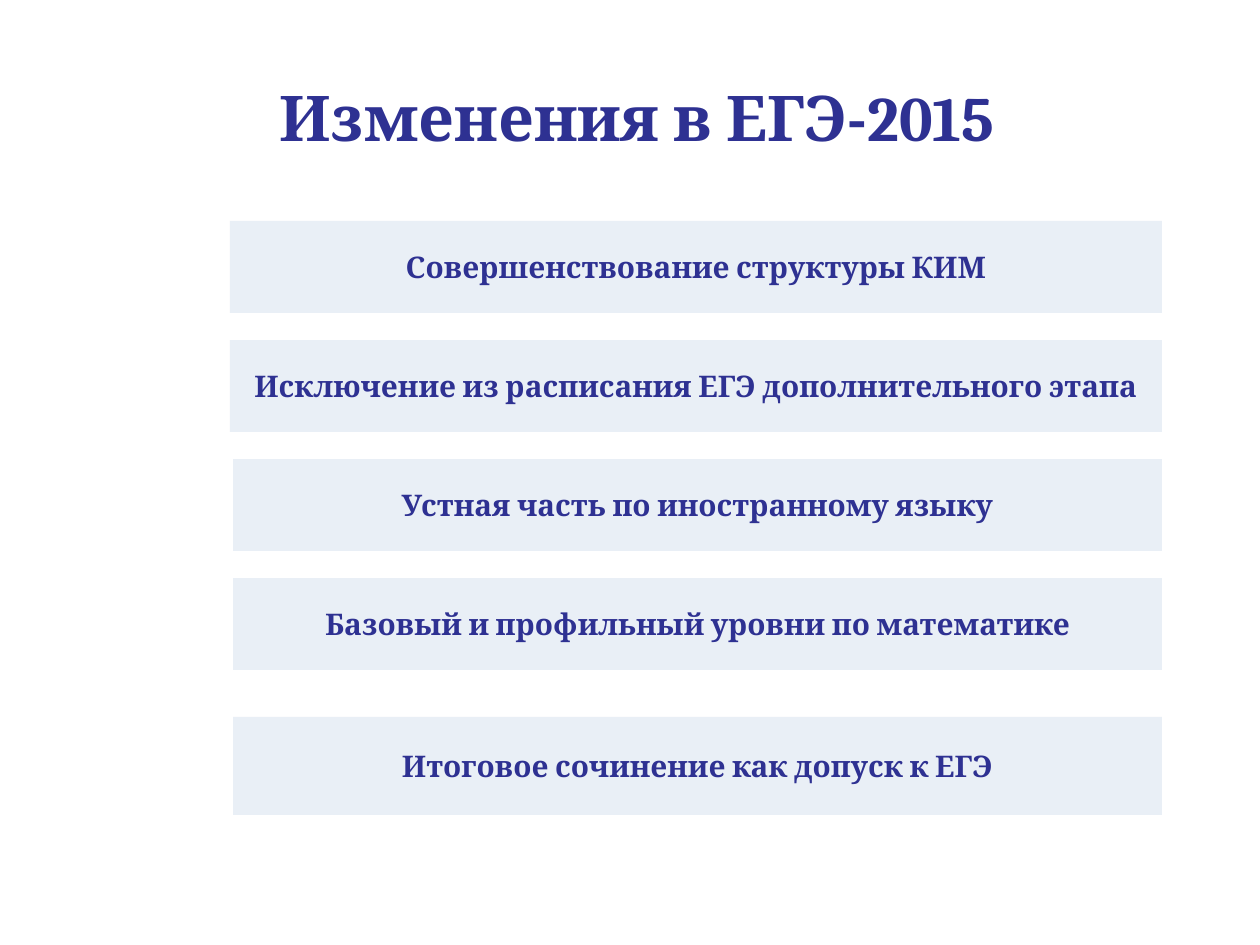
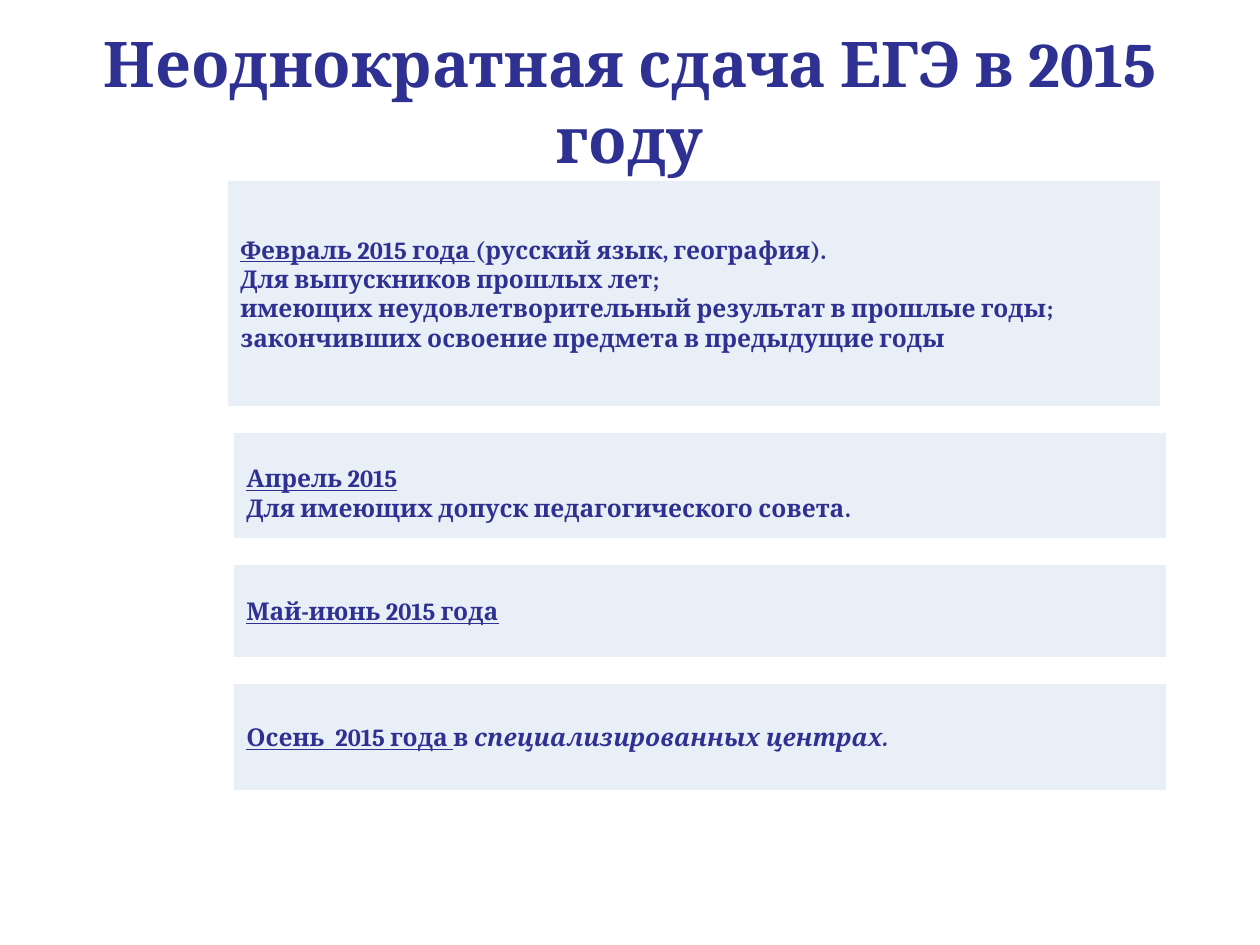
from dataclasses import dataclass

from lxml import etree
from pptx import Presentation
from pptx.dml.color import RGBColor
from pptx.enum.shapes import MSO_SHAPE
from pptx.enum.text import MSO_ANCHOR, PP_ALIGN
from pptx.oxml.ns import qn
from pptx.util import Emu, Pt

RECTANGLE = MSO_SHAPE.RECTANGLE
MIDDLE = MSO_ANCHOR.MIDDLE
CENTER, JUSTIFY = PP_ALIGN.CENTER, PP_ALIGN.JUSTIFY

EMU_PER_PX = 914400 / 126
FONT = "Cambria"
INK = "2E3192"
BAR_FILL = "B9CDE5"
BAR_OPACITY = 31
BAR_WIDTH, BAR_HEIGHT, BAR_GAP = 932, 92, 27
TITLE_SIZE = 36


@dataclass(frozen=True)
class Phrase:
    text: str
    underline: bool = False
    italic: bool = False


@dataclass(frozen=True)
class Line:
    phrases: tuple[Phrase, ...]
    spacing: float = 1.0


@dataclass(frozen=True)
class Bar:
    lines: tuple[Line, ...]
    left: int
    width: int = BAR_WIDTH
    height: int = BAR_HEIGHT
    gap_before: int = BAR_GAP


def px(length: int) -> Emu:
    return Emu(round(length * EMU_PER_PX))


def color(value: str) -> RGBColor:
    return RGBColor.from_string(value)


def line(*phrases: Phrase, spacing: float = 1.0) -> Line:
    return Line(phrases, spacing)


def add_text_shadow(run) -> None:
    """Give the letters a soft grey shadow towards the lower right."""
    effects = etree.Element(qn("a:effectLst"))
    shadow = etree.SubElement(effects, qn("a:outerShdw"), blurRad="38100",
                              dist="38100", dir="2700000", algn="tl")
    shade = etree.SubElement(shadow, qn("a:srgbClr"), val="000000")
    etree.SubElement(shade, qn("a:alpha"), val="43000")
    run.font.fill._xPr.find(qn("a:solidFill")).addnext(effects)


def write_text(shape, lines: tuple[Line, ...], *, size: int,
               align=CENTER, shadow: bool = False) -> None:
    frame = shape.text_frame
    frame.word_wrap = True
    frame.vertical_anchor = MIDDLE
    for index, text_line in enumerate(lines):
        paragraph = frame.add_paragraph() if index else frame.paragraphs[0]
        paragraph.alignment = align
        paragraph.line_spacing = text_line.spacing
        for phrase in text_line.phrases:
            run = paragraph.add_run()
            run.text = phrase.text
            run.font.name = FONT
            run.font.size = Pt(size)
            run.font.bold = True
            run.font.italic = phrase.italic
            run.font.underline = phrase.underline
            run.font.color.rgb = color(INK)
            if shadow:
                add_text_shadow(run)


def add_title(slide, text: str, left: int, top: int, width: int, height: int) -> None:
    box = slide.shapes.add_textbox(px(left), px(top), px(width), px(height))
    write_text(box, (line(Phrase(text)),), size=TITLE_SIZE, shadow=True)


def add_bar(slide, bar: Bar, top: int, size: int, align) -> None:
    shape = slide.shapes.add_shape(RECTANGLE, px(bar.left), px(top),
                                   px(bar.width), px(bar.height))
    shape.shadow.inherit = False
    shape.line.fill.background()
    shape.fill.solid()
    shape.fill.fore_color.rgb = color(BAR_FILL)
    fill_color = shape.fill._xPr.find(qn("a:solidFill"))[0]
    etree.SubElement(fill_color, qn("a:alpha"), val=str(BAR_OPACITY * 1000))
    write_text(shape, bar.lines, size=size, align=align)


def stack_bars(slide, bars: list[Bar], top: int, *, size: int, align) -> None:
    """Place the bars one below another, the first at top."""
    for index, bar in enumerate(bars):
        if index:
            top += bar.gap_before
        add_bar(slide, bar, top, size, align)
        top += bar.height


def build_changes(slide) -> None:
    def change(text: str, left: int = 230, **layout: int) -> Bar:
        return Bar((line(Phrase(text)),), left, width=1162 - left, **layout)

    add_title(slide, "Изменения в ЕГЭ-2015", 70, 72, 1134, 89)
    stack_bars(slide, [
        change("Совершенствование структуры КИМ"),
        change("Исключение из расписания ЕГЭ дополнительного этапа"),
        change("Устная часть по иностранному языку", 233),
        change("Базовый и профильный уровни по математике", 233),
        change("Итоговое сочинение как допуск к ЕГЭ", 233, height=98, gap_before=47),
    ], 221, size=17, align=CENTER)


def build_periods(slide) -> None:
    february = (
        line(Phrase("Февраль 2015 года ", underline=True),
             Phrase("(русский язык, география).")),
        line(Phrase("Для выпускников прошлых лет;")),
        line(Phrase("имеющих неудовлетворительный результат в прошлые годы;")),
        line(Phrase("закончивших освоение предмета в предыдущие годы")),
    )
    april = (
        line(Phrase("Апрель 2015", underline=True), spacing=1.5),
        line(Phrase("Для имеющих допуск педагогического совета.")),
    )
    summer = (line(Phrase("Май-июнь 2015 года", underline=True)),)
    autumn = (
        line(Phrase("Осень  2015 года ", underline=True), Phrase("в "),
             Phrase("специализированных центрах.", italic=True)),
    )
    add_title(slide, "Неоднократная сдача ЕГЭ в 2015 году", 44, 18, 1172, 165)
    stack_bars(slide, [
        Bar(february, 228, height=225),
        Bar(april, 234, height=105),
        Bar(summer, 234),
        Bar(autumn, 234, height=106),
    ], 181, size=14, align=JUSTIFY)


def main() -> None:
    presentation = Presentation()
    presentation.slide_width, presentation.slide_height = px(1260), px(945)
    blank = presentation.slide_layouts[6]
    for build in (build_changes, build_periods):
        build(presentation.slides.add_slide(blank))
    presentation.save("out.pptx")


if __name__ == "__main__":
    main()
